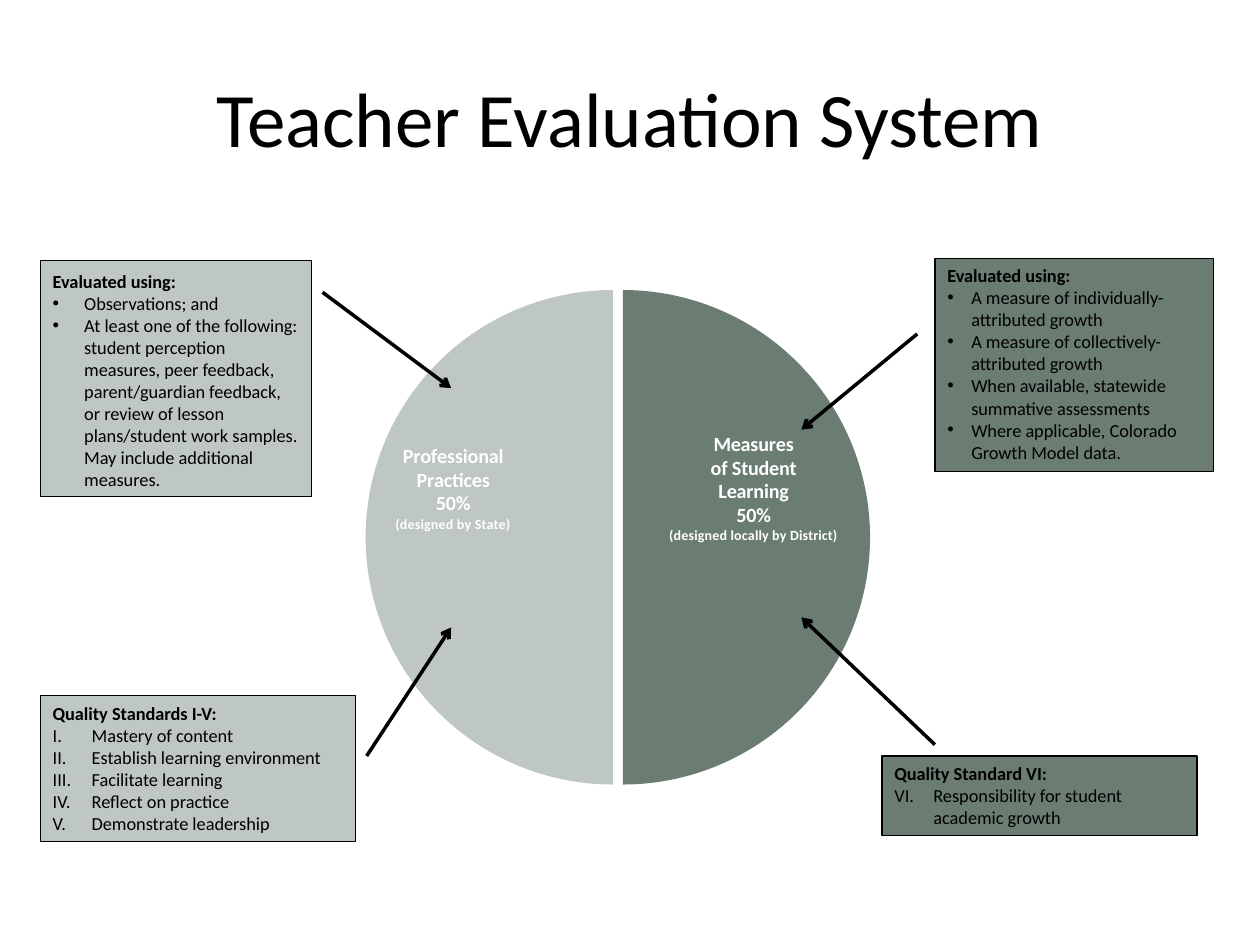
from lxml.etree import SubElement
from pptx import Presentation
from pptx.chart.data import CategoryChartData
from pptx.dml.color import RGBColor
from pptx.enum.chart import XL_CHART_TYPE, XL_LABEL_POSITION
from pptx.enum.shapes import MSO_CONNECTOR, MSO_SHAPE
from pptx.enum.text import MSO_ANCHOR, PP_ALIGN
from pptx.oxml import parse_xml
from pptx.oxml.ns import nsdecls, qn
from pptx.util import Inches, Pt

THEME = {
    "font": "Calibri",
    "black": RGBColor.from_string("000000"),
    "white": RGBColor.from_string("FFFFFF"),
    "light": RGBColor.from_string("BEC7C2"),
    "dark": RGBColor.from_string("6B7D72"),
    "red": RGBColor.from_string("CF543F"),
    "olive": RGBColor.from_string("848058"),
    "title": 44, "body": 10.5, "label": 11.5, "note": 8, "chart": 10,
}

TITLE = "Teacher Evaluation System"
TITLE_BOX = (0.5, 0.3, 9, 1.25)

PIE_BOX = (2.12, 2.05, 5.74, 4.26)
PIE_PLOT = {"x": 0, "y": 0.05, "w": 0.97, "h": 0.94}
PIE_VALUES = [50, None, 50, None]
PIE_COLORS = ["dark", "red", "light", "olive"]
# slice index: (label lines, small note, shift from the middle of the slice)
PIE_LABELS = {
    0: (["Measures", "of Student", "Learning", "50%"],
        "(designed locally by District)", (0.01, -0.09)),
    2: (["Professional", "Practices", "50%"],
        "(designed by State)", (-0.05, -0.09)),
}

# "start" is the first Roman numeral; without it the items have bullets
PANELS = [
    {"box": (0.32, 2.07, 2.15, 1.87), "fill": "light", "indent": 0.25,
     "anchor": MSO_ANCHOR.BOTTOM, "heading": "Evaluated using:",
     "items": ["Observations; and",
               "At least one of the following: student perception measures, "
               "peer feedback, parent/guardian feedback, or review of lesson "
               "plans/student work samples. May include additional measures."]},
    {"box": (0.32, 5.52, 2.5, 1.16), "fill": "light", "indent": 0.31, "start": 1,
     "heading": "Quality Standards I-V:",
     "items": ["Mastery of content", "Establish learning environment",
               "Facilitate learning", "Reflect on practice",
               "Demonstrate leadership"]},
    {"box": (7.42, 2.05, 2.21, 1.69), "fill": "dark", "indent": 0.19,
     "heading": "Evaluated using:",
     "items": ["A measure of individually-attributed growth",
               "A measure of collectively-attributed growth",
               "When available, statewide summative assessments",
               "Where applicable, Colorado Growth Model data."]},
    {"box": (7, 6, 2.5, 0.63), "fill": "dark", "indent": 0.31, "start": 6,
     "heading": "Quality Standard VI:",
     "items": ["Responsibility for student academic growth"]},
]

ARROWS = [
    ((2.56, 2.32), (3.58, 3.08)),
    ((2.91, 6), (3.58, 4.98)),
    ((7.28, 2.65), (6.36, 3.41)),
    ((7.42, 5.91), (6.36, 4.9)),
]


def inches(lengths):
    return [Inches(length) for length in lengths]


def format_font(font, size, color="black", bold=False):
    values = {"name": THEME["font"], "size": Pt(THEME[size]), "bold": bold}
    for name, value in values.items():
        setattr(font, name, value)
    font.color.rgb = THEME[color]


def write_lines(frame, lines, alignment):
    """Fill the frame with one paragraph per (text, font format) pair."""
    for index, (text, font_format) in enumerate(lines):
        paragraph = frame.add_paragraph() if index else frame.paragraphs[0]
        paragraph.alignment = alignment
        run = paragraph.add_run()
        run.text = text
        format_font(run.font, **font_format)


def add_title(slide):
    frame = slide.shapes.add_textbox(*inches(TITLE_BOX)).text_frame
    frame.word_wrap = True
    frame.vertical_anchor = MSO_ANCHOR.MIDDLE
    write_lines(frame, [(TITLE, {"size": "title"})], PP_ALIGN.CENTER)


def manual_layout(values, inner=False):
    target = '<c:layoutTarget val="inner"/>' if inner else ""
    modes = "".join(f'<c:{key}Mode val="edge"/>' for key in "xy") if inner else ""
    sizes = "".join(f'<c:{key} val="{value}"/>' for key, value in values.items())
    return parse_xml(f'<c:layout {nsdecls("c")}><c:manualLayout>'
                     f'{target}{modes}{sizes}</c:manualLayout></c:layout>')


def add_pie(slide):
    data = CategoryChartData()
    data.categories = [""] * len(PIE_VALUES)
    data.add_series("Series 1", PIE_VALUES)
    chart = slide.shapes.add_chart(
        XL_CHART_TYPE.PIE, *inches(PIE_BOX), data).chart
    chart.has_title = chart.has_legend = False
    format_font(chart.font, "chart")
    plot = chart.plots[0]
    plot.vary_by_categories = True
    series = plot.series[0]

    for index, color in enumerate(PIE_COLORS):
        fill = series.points[index].format.fill
        fill.solid()
        fill.fore_color.rgb = THEME[color]
    explosion = parse_xml(f'<c:explosion {nsdecls("c")} val="2"/>')
    series._element.find(qn("c:tx")).addnext(explosion)

    series.data_labels.show_value = False
    for leader in series._element.iter(qn("c:showLeaderLines")):
        leader.set("val", "0")
    for index, (lines, note, shift) in PIE_LABELS.items():
        label = series.points[index].data_label
        large = {"size": "label", "color": "white", "bold": True}
        texts = [(line, large) for line in lines]
        texts.append((note, {**large, "size": "note"}))
        write_lines(label.text_frame, texts, PP_ALIGN.CENTER)
        label.position = XL_LABEL_POSITION.CENTER
        element = series._element.xpath(f'.//c:dLbl[c:idx/@val="{index}"]')[0]
        element.find(qn("c:idx")).addnext(manual_layout(dict(zip("xy", shift))))

    plot_area = chart._chartSpace.chart.plotArea
    for layout in plot_area.findall(qn("c:layout")):
        plot_area.remove(layout)
    plot_area.insert(0, manual_layout(PIE_PLOT, inner=True))


def add_list_marker(paragraph, indent, start):
    """Hang a bullet, or a Roman numeral counted from start."""
    properties = paragraph._p.get_or_add_pPr()
    properties.set("marL", str(Inches(indent)))
    properties.set("indent", str(-Inches(indent)))
    if start:
        SubElement(properties, qn("a:buFont"), typeface="+mj-lt")
        SubElement(properties, qn("a:buAutoNum"), type="romanUcPeriod",
                   startAt=str(start))
    else:
        SubElement(properties, qn("a:buFont"), typeface="Arial")
        SubElement(properties, qn("a:buChar"), char="•")


def add_panel(slide, panel):
    shape = slide.shapes.add_shape(MSO_SHAPE.RECTANGLE, *inches(panel["box"]))
    shape.shadow.inherit = False
    shape.fill.solid()
    shape.fill.fore_color.rgb = THEME[panel["fill"]]
    shape.line.color.rgb = THEME["black"]
    shape.line.width = Pt(0.75)
    frame = shape.text_frame
    frame.word_wrap = True
    frame.vertical_anchor = panel.get("anchor", MSO_ANCHOR.TOP)
    lines = [(panel["heading"], {"size": "body", "bold": True})]
    lines += [(item, {"size": "body"}) for item in panel["items"]]
    write_lines(frame, lines, PP_ALIGN.LEFT)
    for paragraph in frame.paragraphs[1:]:
        add_list_marker(paragraph, panel["indent"], panel.get("start"))


def add_arrow(slide, start, end):
    arrow = slide.shapes.add_connector(
        MSO_CONNECTOR.STRAIGHT, *inches(start + end))
    arrow.line.color.rgb = THEME["black"]
    arrow.line.width = Pt(2)
    SubElement(arrow.line._get_or_add_ln(), qn("a:tailEnd"), type="arrow")
    SubElement(arrow._element.spPr, qn("a:effectLst"))


def main():
    presentation = Presentation()
    presentation.slide_width, presentation.slide_height = inches((10, 7.5))
    slide = presentation.slides.add_slide(presentation.slide_layouts[6])
    add_title(slide)
    add_pie(slide)
    for panel in PANELS:
        add_panel(slide, panel)
    for start, end in ARROWS:
        add_arrow(slide, start, end)
    presentation.save("out.pptx")


if __name__ == "__main__":
    main()
